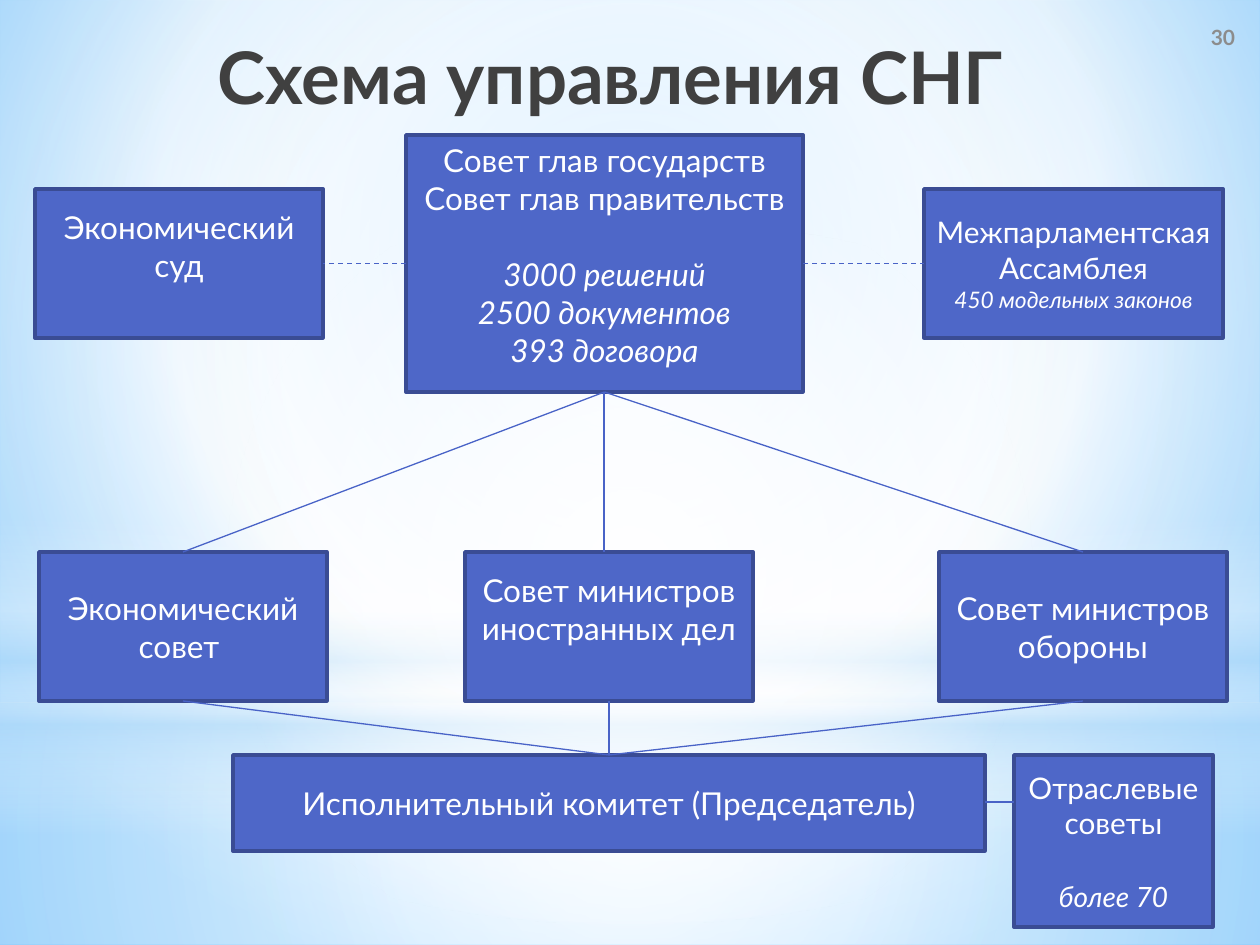
from dataclasses import dataclass
from typing import Optional

from lxml import etree
from pptx import Presentation
from pptx import util as u
from pptx.dml.color import RGBColor
from pptx.enum import dml, shapes, text
from pptx.oxml.ns import nsdecls, qn

PX = 914400 / 126
FONT = "Lato"
WHITE = RGBColor(0xFF, 0xFF, 0xFF)
SKY = RGBColor(0xB4, 0xDC, 0xFA)
LIGHT_BLUE = RGBColor(0x9E, 0xD5, 0xFF)
BRIGHT_BLUE = RGBColor(0x5B, 0xB9, 0xFF)
BOX_FILL = RGBColor(0x4E, 0x67, 0xC8)
BOX_EDGE = RGBColor(0x3A, 0x4C, 0x94)
LINK = RGBColor(0x49, 0x63, 0xC7)
TITLE = RGBColor(0x40, 0x40, 0x40)
NUMBER = RGBColor(0x8C, 0x8C, 0x8C)
RECT = shapes.MSO_SHAPE.RECTANGLE
TOP, LEFT, BOTTOM, RIGHT = range(4)  # connection sites of a rectangle
MIDDLE = text.MSO_ANCHOR.MIDDLE


@dataclass
class Gradient:
    stops: list  # (position %, colour, opacity %)
    centre: Optional[tuple] = None  # left, top, right, bottom %; None is vertical


@dataclass
class Line:
    words: str
    size: float = 18
    italic: bool = False
    before: int = 0


@dataclass
class Box:
    key: str
    at: tuple
    lines: list
    anchor: text.MSO_ANCHOR = MIDDLE
    bottom: int = 6


@dataclass
class Link:
    start: str
    start_site: int
    end: str
    end_site: int
    dashed: bool = False


MID = (50, 50, 50, 50)
BACKGROUND = Gradient([(0, LIGHT_BLUE, 100), (60, WHITE, 100), (100, BRIGHT_BLUE, 100)],
                      (20, 10, 20, 60))
LAYERS = [
    (RECT, (0, 703, 1260, 242),
     Gradient([(0, WHITE, 91), (37, WHITE, 76), (100, SKY, 79)], MID)),
    (RECT, (0, 0, 1260, 703),
     Gradient([(0, WHITE, 89), (48, WHITE, 62), (100, SKY, 79)], MID)),
    (RECT, (0, 519, 1260, 315),
     Gradient([(0, WHITE, 0), (29, WHITE, 30), (45, SKY, 40), (55, WHITE, 26),
               (65, SKY, 60), (100, WHITE, 0)])),
    (shapes.MSO_SHAPE.OVAL, (0, 221, 1260, 703),
     Gradient([(0, WHITE, 100), (56, WHITE, 0)], MID)),
]

BOXES = [
    Box("heads", (406, 135, 397, 257),
        [Line("Совет глав государств"), Line("Совет глав правительств"),
         Line("3000 решений", italic=True, before=22),
         Line("2500 документов", italic=True), Line("393 договора", italic=True)],
        text.MSO_ANCHOR.TOP),
    Box("court", (35, 189, 288, 149), [Line("Экономический суд")], bottom=42),
    Box("assembly", (924, 189, 299, 149),
        [Line("Межпарламентская Ассамблея", 17),
         Line("450 модельных законов", 13, True)]),
    Box("economy", (39, 552, 288, 149), [Line("Экономический совет ")]),
    Box("foreign", (465, 552, 288, 149),
        [Line("Совет министров иностранных дел")], bottom=42),
    Box("defence", (939, 552, 288, 149), [Line("Совет министров обороны")]),
    Box("committee", (233, 755, 752, 96),
        [Line("Исполнительный комитет (Председатель)")]),
    Box("branches", (1014, 755, 199, 172),
        [Line("Отраслевые советы", 17), Line("более 70", 16, True, 22)]),
]

LINKS = [
    Link("heads", LEFT, "court", RIGHT, True),
    Link("heads", RIGHT, "assembly", LEFT, True),
    Link("heads", BOTTOM, "economy", TOP),
    Link("heads", BOTTOM, "defence", TOP),
    *(Link(council, BOTTOM, "committee", TOP)
      for council in ("economy", "foreign", "defence")),
]
# Straight links that meet a box away from the middle of its side
STRAIGHT = [(604, 392, 604, 552), (985, 802, 1014, 802)]


def px(*values: int) -> list:
    return [u.Emu(round(v * PX)) for v in values]


def set_gradient(fill, props, gradient: Gradient) -> None:
    """Swap the solid fill inside props for a gradient."""
    fill.solid()
    stops = "".join(
        f'<a:gs pos="{pos * 1000}"><a:srgbClr val="{colour}">'
        f'<a:alpha val="{opacity * 1000}"/></a:srgbClr></a:gs>'
        for pos, colour, opacity in gradient.stops)
    if gradient.centre:
        l, t, r, b = (v * 1000 for v in gradient.centre)
        shade = (f'<a:path path="circle"><a:fillToRect l="{l}" t="{t}" '
                 f'r="{r}" b="{b}"/></a:path>')
    else:
        shade = '<a:lin ang="5400000" scaled="0"/>'
    xml = (f'<a:gradFill {nsdecls("a")} rotWithShape="1">'
           f'<a:gsLst>{stops}</a:gsLst>{shade}</a:gradFill>')
    props.replace(props.find(qn("a:solidFill")), etree.fromstring(xml))


def draw_backdrop(prs, s) -> None:
    """Colour the background and lay the soft layers on the slide master."""
    set_gradient(s.background.fill, s._element.find(".//" + qn("p:bgPr")), BACKGROUND)
    tree = prs.slide_master.shapes._spTree
    for i, (kind, at, gradient) in enumerate(LAYERS):
        sp = s.shapes.add_shape(kind, *px(*at))
        sp.shadow.inherit = False
        sp.line.fill.background()
        set_gradient(sp.fill, sp._element.spPr, gradient)
        sp._element.nvSpPr.cNvPr.set("id", str(100 + i))
        tree.insert(2 + i, sp._element)


def write(tf, lines: list, colour: RGBColor, bold: bool = False) -> None:
    tf.word_wrap = True
    for i, line in enumerate(lines):
        p = tf.add_paragraph() if i else tf.paragraphs[0]
        p.text = line.words
        p.alignment = text.PP_ALIGN.CENTER
        p.space_before = u.Pt(line.before)
        for r in p.runs:
            r.font.name, r.font.size = FONT, u.Pt(line.size)
            r.font.bold, r.font.italic = bold, line.italic
            r.font.color.rgb = colour


def draw_box(s, box: Box):
    sp = s.shapes.add_shape(RECT, *px(*box.at))
    sp.shadow.inherit = False
    sp.fill.solid()
    sp.fill.fore_color.rgb = BOX_FILL
    sp.line.color.rgb = BOX_EDGE
    sp.line.width = u.Pt(2)
    tf = sp.text_frame
    tf.vertical_anchor = box.anchor
    tf.margin_bottom = px(box.bottom)[0]
    write(tf, box.lines, WHITE)
    return sp


def draw_line(s, ends: tuple, dashed: bool = False):
    line = s.shapes.add_connector(shapes.MSO_CONNECTOR.STRAIGHT, *px(*ends))
    line.line.color.rgb = LINK
    line.line.width = u.Pt(0.75)
    if dashed:
        line.line.dash_style = dml.MSO_LINE.DASH
    etree.SubElement(line._element.spPr, qn("a:effectLst"))
    return line


def main() -> None:
    prs = Presentation()
    prs.slide_width, prs.slide_height = px(1260, 945)
    s = prs.slides.add_slide(prs.slide_layouts[5])
    s.background.fill.solid()
    draw_backdrop(prs, s)

    number = s.shapes.add_textbox(*px(1186, 0, 74, 74))
    number.text_frame.vertical_anchor = MIDDLE
    write(number.text_frame, [Line("30", 12)], NUMBER, bold=True)

    title = s.shapes.title
    title.left, title.top, title.width, title.height = px(0, 22, 1221, 108)
    title.text_frame.vertical_anchor = MIDDLE
    write(title.text_frame, [Line("Схема управления СНГ", 41.4)], TITLE, bold=True)

    boxes = {box.key: draw_box(s, box) for box in BOXES}
    for link in LINKS:
        line = draw_line(s, (0, 0, 0, 0), link.dashed)
        line.begin_connect(boxes[link.start], link.start_site)
        line.end_connect(boxes[link.end], link.end_site)
    for ends in STRAIGHT:
        draw_line(s, ends)
    prs.save("out.pptx")


if __name__ == "__main__":
    main()
